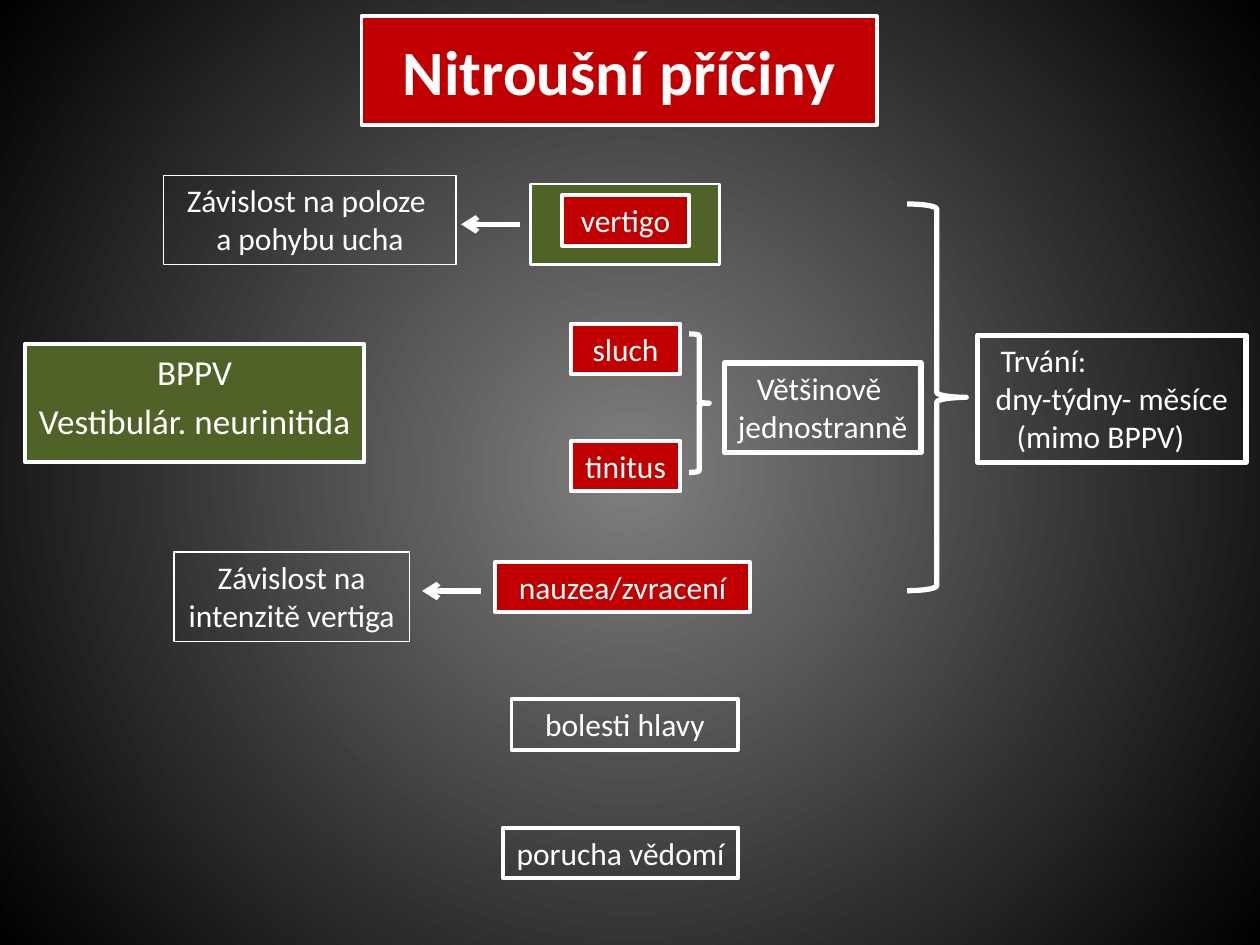
"""Build the slide on inner ear causes of vertigo."""
from typing import NamedTuple, Optional

from lxml.etree import SubElement
from pptx import Presentation
from pptx.dml.color import RGBColor
from pptx.enum.shapes import MSO_CONNECTOR as Conn, MSO_SHAPE as Shape
from pptx.enum.text import MSO_ANCHOR as Anchor, PP_ALIGN as Align
from pptx.oxml.ns import qn
from pptx.util import Pt

COLORS = {"white": "FFFFFF", "red": "C00000", "green": "4F6228",
          "center": "7F7F7F", "edge": "000000"}
FONT = "Calibri"
LABEL_H = 28.8


class Para(NamedTuple):
    text: str
    align: Align = Align.CENTER
    left: float = 0
    right: float = 0


class Box(NamedTuple):
    x: float
    y: float
    w: float
    h: float
    paras: tuple = ()
    fill: Optional[str] = None
    line: float = 2.25
    size: float = 18
    bold: bool = False
    before: float = 0
    anchor: Anchor = Anchor.TOP
    wrap: bool = True


class Brace(NamedTuple):
    x: float
    y: float
    w: float
    h: float


class Arrow(NamedTuple):
    x1: float
    x2: float
    y: float


BRACES = [Brace(518.4, 116.6, 33.8, 221), Brace(393.8, 190.8, 11.5, 79.2)]

BOXES = [
    Box(303.1, 105.1, 108, 46.1, fill="green", line=1.5),
    Box(206.6, 9.4, 294.5, 61.9, (Para("Nitroušní příčiny"),), "red",
        size=36, bold=True, anchor=Anchor.MIDDLE),
    Box(14.4, 196.6, 193.7, 67.7, (Para("BPPV"), Para("Vestibulár. neurinitida")),
        "green", size=20, before=4),
    Box(326.2, 185, 62.6, LABEL_H, (Para("sluch"),), "red"),
    Box(321.1, 111.6, 72.7, LABEL_H, (Para("vertigo"),), "red"),
    Box(326.2, 252, 62.6, LABEL_H, (Para("tinitus"),), "red"),
    Box(292.3, 399.6, 129.6, LABEL_H, (Para("bolesti hlavy"),)),
    Box(287.3, 473, 134.6, LABEL_H, (Para("porucha vědomí"),)),
    Box(283, 321.1, 145.4, LABEL_H, (Para("nauzea/zvracení"),), "red"),
    Box(558.7, 191.5, 153.4, 72.7,
        (Para("Trvání:", Align.LEFT, left=6), Para("dny-týdny- měsíce"),
         Para("(mimo BPPV)", right=13)), line=3),
    Box(93.6, 100.1, 167, 51.1,
        (Para("Závislost na poloze "), Para("a pohybu ucha")), line=0.75),
    Box(414, 207.4, 112.3, 51.1,
        (Para("Většinově "), Para("jednostranně")), line=3, wrap=False),
    Box(99.4, 315.4, 134.6, 51.1,
        (Para("Závislost na intenzitě vertiga"),), line=0.75),
]

ARROWS = [Arrow(297.4, 263.5, 128.2), Arrow(275, 241.2, 337.7)]


def rgb(name: str) -> RGBColor:
    """Return the named colour."""
    return RGBColor.from_string(COLORS[name])


def set_background(s) -> None:
    """Fill the slide with a gradient running out from its middle."""
    fill = s.background.fill
    fill.gradient()
    for stop, name in zip(fill.gradient_stops, ("center", "edge")):
        stop.color.rgb = rgb(name)
    grad = s.background._cSld.find(".//" + qn("a:gradFill"))
    lin = grad.find(qn("a:lin"))
    if lin is not None:
        grad.remove(lin)
    circle = SubElement(grad, qn("a:path"), {"path": "circle"})
    SubElement(circle, qn("a:fillToRect"), dict.fromkeys("ltrb", "50000"))


def add_outline(s, kind: Shape, item, line: float):
    """Add an unfilled white-lined shape at the item's place."""
    sp = s.shapes.add_shape(kind, Pt(item.x), Pt(item.y), Pt(item.w), Pt(item.h))
    sp.shadow.inherit = False
    sp.fill.background()
    sp.line.color.rgb = rgb("white")
    sp.line.width = Pt(line)
    return sp


def add_para(p, para: Para, box: Box) -> None:
    """Write one paragraph in the style of its box."""
    p.alignment = para.align
    p.space_before = Pt(box.before)
    pr = p._p.get_or_add_pPr()
    pr.set("marL", str(Pt(para.left)))
    pr.set("marR", str(Pt(para.right)))
    r = p.add_run()
    r.text = para.text
    r.font.name = FONT
    r.font.size = Pt(box.size)
    r.font.bold = box.bold
    r.font.color.rgb = rgb("white")


def add_box(s, box: Box) -> None:
    """Add a rectangle with its text."""
    sp = add_outline(s, Shape.RECTANGLE, box, box.line)
    if box.fill:
        sp.fill.solid()
        sp.fill.fore_color.rgb = rgb(box.fill)
    tf = sp.text_frame
    tf.word_wrap = box.wrap
    tf.vertical_anchor = box.anchor
    for i, para in enumerate(box.paras):
        add_para(tf.add_paragraph() if i else tf.paragraphs[0], para, box)


def add_arrow(s, arrow: Arrow) -> None:
    """Add a horizontal line with an arrowhead at its end."""
    c = s.shapes.add_connector(Conn.STRAIGHT, Pt(arrow.x1), Pt(arrow.y),
                               Pt(arrow.x2), Pt(arrow.y))
    c.line.color.rgb = rgb("white")
    c.line.width = Pt(3)
    SubElement(c.line._get_or_add_ln(), qn("a:tailEnd"), {"type": "arrow"})
    SubElement(c._element.spPr, qn("a:effectLst"))


def main() -> None:
    """Build and save the slide."""
    prs = Presentation()
    prs.slide_width, prs.slide_height = Pt(720), Pt(540)
    s = prs.slides.add_slide(prs.slide_layouts[6])
    set_background(s)
    for brace in BRACES:
        add_outline(s, Shape.RIGHT_BRACE, brace, 3)
    for box in BOXES:
        add_box(s, box)
    for arrow in ARROWS:
        add_arrow(s, arrow)
    prs.save("out.pptx")


if __name__ == "__main__":
    main()
